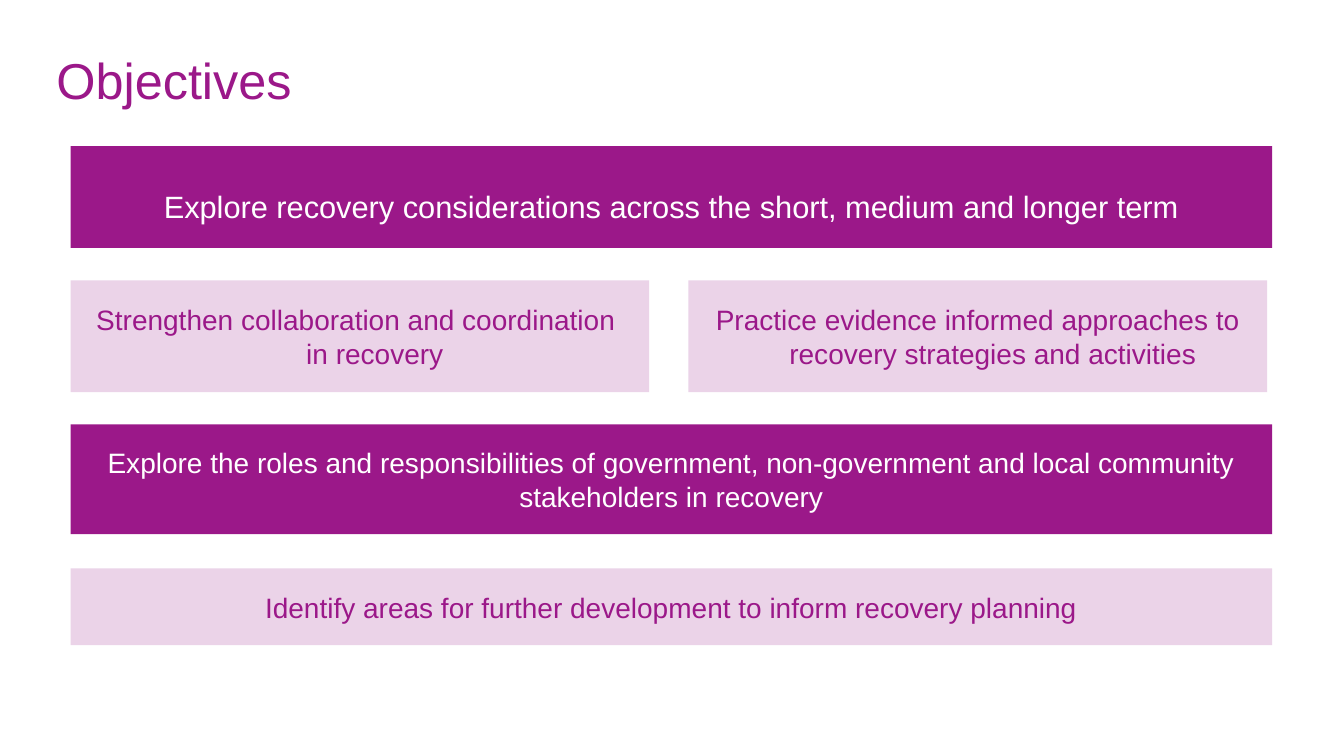
from pptx import Presentation
from pptx.dml.color import RGBColor
from pptx.enum.shapes import MSO_SHAPE
from pptx.enum.text import MSO_ANCHOR, PP_ALIGN
from pptx.util import Pt

ROUNDED = MSO_SHAPE.ROUNDED_RECTANGLE
MIDDLE = MSO_ANCHOR.MIDDLE
LEFT, CENTER = PP_ALIGN.LEFT, PP_ALIGN.CENTER

COLORS = {"purple": "9B1889", "pale": "EBD3E8", "white": "FFFFFF"}
FONT = "Arial"
TITLE = "Objectives"
ROWS = [
    {"top": 104.4, "height": 72.7, "fill": "purple", "ink": "white",
     "size": 22, "indent": 27, "spacing": 1.5,
     "texts": [["Explore recovery considerations across the short, medium and longer term"]]},
    {"top": 200.2, "height": 79.9, "fill": "pale", "ink": "purple",
     "size": 20, "indent": 27, "spacing": 1,
     "texts": [["Strengthen collaboration and coordination ", "in recovery "],
               ["Practice evidence informed approaches to recovery strategies and activities "]]},
    {"top": 303.1, "height": 78.5, "fill": "purple", "ink": "white",
     "size": 20, "indent": 0, "spacing": 1,
     "texts": [["Explore the roles and responsibilities of government, "
                "non-government and local community stakeholders in recovery"]]},
    {"top": 406.1, "height": 54.7, "fill": "pale", "ink": "purple",
     "size": 20, "indent": 0, "spacing": 1,
     "texts": [["Identify areas for further development to inform recovery planning"]]},
]
ROW_LEFT, FULL_WIDTH = 50.4, 858.2
HALF_WIDTH, HALF_GAP = 413.3, 28.1


def color(name):
    return RGBColor.from_string(COLORS[name])


def add_run(p, text, size, ink):
    r = p.add_run()
    r.text = text
    r.font.name = FONT
    r.font.size = Pt(size)
    r.font.color.rgb = color(ink)


def add_box(s, left, width, row, lines):
    sp = s.shapes.add_shape(ROUNDED, Pt(left), Pt(row["top"]), Pt(width), Pt(row["height"]))
    sp.adjustments[0] = 0
    sp.shadow.inherit = False
    sp.fill.solid()
    sp.fill.fore_color.rgb = color(row["fill"])
    sp.line.fill.background()
    tf = sp.text_frame
    tf.word_wrap = True
    tf.vertical_anchor = MIDDLE
    p = tf.paragraphs[0]
    p.alignment = CENTER
    p.line_spacing = row["spacing"]
    if row["indent"]:
        pPr = p._p.get_or_add_pPr()
        pPr.set("marL", str(Pt(row["indent"])))
        pPr.set("indent", str(-Pt(row["indent"])))
    for i, line in enumerate(lines):
        if i:
            p.add_line_break()
        add_run(p, line, row["size"], row["ink"])


prs = Presentation()
prs.slide_width, prs.slide_height = Pt(960), Pt(540)
s = prs.slides.add_slide(prs.slide_layouts[5])

title = s.shapes.title
title.left, title.top, title.width, title.height = Pt(33.1), Pt(15.8), Pt(897.8), Pt(82.1)
title.text_frame.vertical_anchor = MIDDLE
p = title.text_frame.paragraphs[0]
p.alignment = LEFT
add_run(p, TITLE, 36, "purple")

for row in ROWS:
    width = FULL_WIDTH if len(row["texts"]) == 1 else HALF_WIDTH
    for col, lines in enumerate(row["texts"]):
        add_box(s, ROW_LEFT + col * (width + HALF_GAP), width, row, lines)

prs.save("out.pptx")
